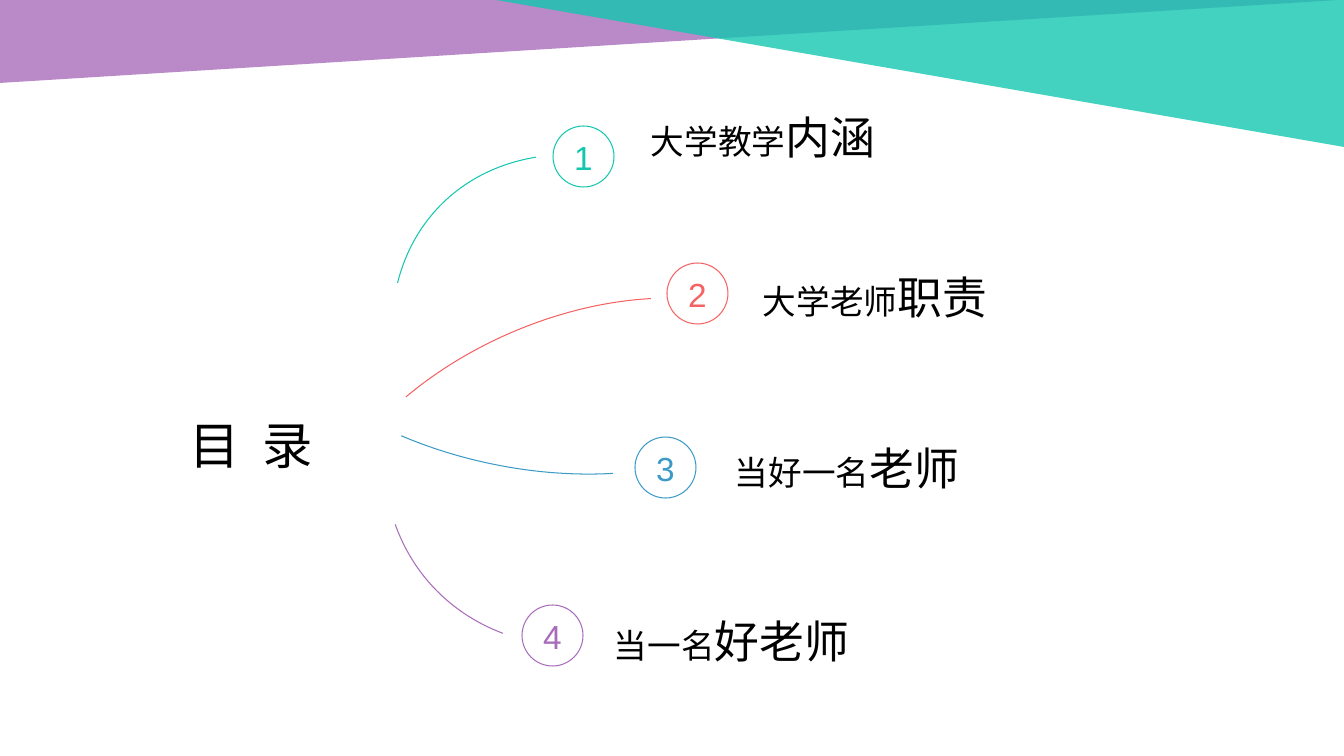
from math import atan2, degrees

from pptx import Presentation
from pptx.dml.color import RGBColor
from pptx.enum.shapes import MSO_SHAPE
from pptx.enum.text import MSO_ANCHOR, MSO_AUTO_SIZE, PP_ALIGN
from pptx.oxml.ns import qn
from pptx.oxml.xmlchemy import OxmlElement
from pptx.util import Pt

TEAL = RGBColor(0x13, 0xC7, 0xAF)
RED = RGBColor(0xF5, 0x62, 0x62)
BLUE = RGBColor(0x3B, 0x9A, 0xC6)
PURPLE = RGBColor(0xA8, 0x6C, 0xBB)
BLACK = RGBColor(0, 0, 0)

# Content: lengths in px
SCALE = 914400 / 100.8
FONT = "Arial"
HEADING = "目 录"
HEADING_BOX = (138, 363, 226, 144)
BANNERS = [  # box, colour, flips
    ((0, 0, 1339, 83), PURPLE, ["flipV"]),
    ((496, 0, 848, 147), TEAL, ["flipH", "flipV"]),
]
ITEMS = [  # lead, emphasis, colour, circle corner, text corner
    ("大学教学", "内涵", TEAL, (553, 126), (641, 89)),
    ("大学老师", "职责", RED, (667, 263), (753, 249)),
    ("当好一名", "老师", BLUE, (635, 437), (725, 420)),
    ("当一名", "好老师", PURPLE, (522, 605), (604, 593)),
]
ARCS = [  # ellipse box, rotation, clockwise start and end on the slide
    ((418, 131, 399, 496), 314.3, (398, 283), (536, 157)),
    ((298, 319, 562, 351), 336.3, (406, 397), (651, 298)),
    ((236, 134, 576, 333), 192, (613, 473), (401, 436)),
    ((402, 194, 408, 469), 229, (503, 633), (396, 524)),
]
CIRCLE = 61
TEXT_SIZE = (488, 56)


def px(*lengths):
    return [round(length * SCALE) for length in lengths]


def outline(shape, color):
    shape.shadow.inherit = False
    shape.fill.background()
    shape.line.color.rgb = color
    shape.line.width = Pt(0.75)


def style(para, color, size, spacing, align):
    para.font.name = FONT
    para.font.size = Pt(size)
    para.font.color.rgb = color
    para.line_spacing = spacing
    para.alignment = align


def add_banner(page, box, color, flips):
    banner = page.shapes.add_shape(MSO_SHAPE.RIGHT_TRIANGLE, *px(*box))
    banner.shadow.inherit = False
    banner.line.fill.background()
    banner.fill.solid()
    banner.fill.fore_color.rgb = color
    alpha = OxmlElement("a:alpha")
    alpha.set("val", "80000")
    banner._element.spPr.find(qn("a:solidFill"))[0].append(alpha)
    for flip in flips:
        banner._element.spPr.find(qn("a:xfrm")).set(flip, "1")


def add_arc(page, box, rotation, start, end, color):
    arc = page.shapes.add_shape(MSO_SHAPE.ARC, *px(*box))
    outline(arc, color)
    arc.rotation = rotation
    left, top, width, height = box
    for index, (x, y) in enumerate((start, end)):
        angle = degrees(atan2(y - top - height / 2, x - left - width / 2))
        # An adjustment of 0.6 is one degree
        arc.adjustments[index] = (angle - rotation) % 360 * 0.6


def add_number(page, number, corner, color):
    circle = page.shapes.add_shape(MSO_SHAPE.OVAL, *px(*corner, CIRCLE, CIRCLE))
    outline(circle, color)
    frame = circle.text_frame
    frame.margin_left = frame.margin_right = frame.margin_top = 0
    frame.margin_bottom = px(2)[0]
    frame.vertical_anchor = MSO_ANCHOR.MIDDLE
    frame.word_wrap = False
    frame.text = str(number)
    style(frame.paragraphs[0], color, 23.8, 1.1, PP_ALIGN.CENTER)


def add_label(page, lead, emphasis, corner):
    frame = page.shapes.add_textbox(*px(*corner, *TEXT_SIZE)).text_frame
    frame.word_wrap = True
    para = frame.paragraphs[0]
    style(para, BLACK, 24, 1.3, PP_ALIGN.JUSTIFY)
    for words, size in ((lead, 24), (emphasis, 32)):
        span = para.add_run()
        span.text = words
        span.font.size = Pt(size)


def main():
    deck = Presentation()
    deck.slide_width, deck.slide_height = px(1344, 756)
    page = deck.slides.add_slide(deck.slide_layouts[5])

    # Corner banners
    for banner in BANNERS:
        add_banner(page, *banner)

    # Heading, its two characters spread apart
    title = page.shapes.title
    title.left, title.top, title.width, title.height = px(*HEADING_BOX)
    frame = title.text_frame
    frame.text = HEADING
    frame.auto_size = MSO_AUTO_SIZE.NONE
    frame.vertical_anchor = MSO_ANCHOR.MIDDLE
    style(frame.paragraphs[0], BLACK, 36, 1.3, PP_ALIGN.CENTER)
    frame.paragraphs[0].runs[0]._r.get_or_add_rPr().set("spc", "400")

    # Branches: arc, numbered circle, label
    for number, (item, arc) in enumerate(zip(ITEMS, ARCS), 1):
        lead, emphasis, color, circle_corner, text_corner = item
        add_arc(page, *arc, color)
        add_number(page, number, circle_corner, color)
        add_label(page, lead, emphasis, text_corner)

    deck.save("out.pptx")


if __name__ == "__main__":
    main()
